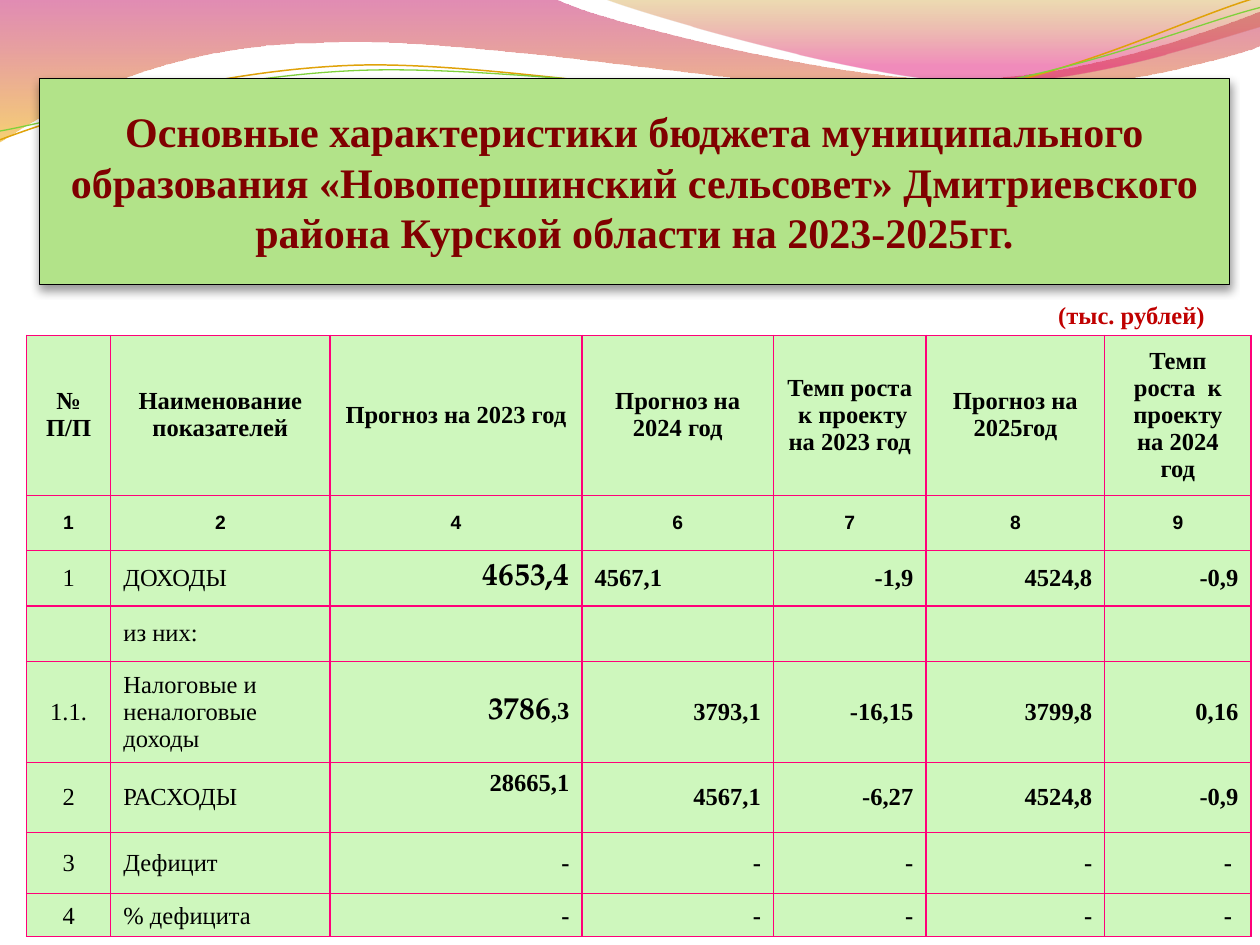
from lxml.etree import SubElement
from pptx import Presentation
from pptx.dml.color import RGBColor
from pptx.enum.text import MSO_ANCHOR, PP_ALIGN
from pptx.oxml.ns import qn
from pptx.util import Inches, Pt

PINK, AMBER = RGBColor(0xBD, 0x00, 0x59), RGBColor(0xF0, 0xAB, 0x00)
OLIVE, MAGENTA = RGBColor(0xC3, 0x8B, 0x00), RGBColor(0xE1, 0x00, 0x6B)
ORANGE, LIME = RGBColor(0xE0, 0xA2, 0x09), RGBColor(0x7F, 0xD1, 0x3B)
TITLE_FILL, MAROON = RGBColor(0xB2, 0xE3, 0x89), RGBColor(0x80, 0x00, 0x00)
RED, BLACK = RGBColor(0xC0, 0x00, 0x00), RGBColor(0x00, 0x00, 0x00)
CELL_FILL, BORDER = RGBColor(0xCE, 0xF7, 0xBD), RGBColor(0xFF, 0x00, 0x79)
SERIF, SANS, PAGELLA = "Times New Roman", "Arial", "TeX Gyre Pagella"

# Outlines: a pair is a point for a straight line, six numbers are a Bezier curve.
LEFT_WAVE = [(0, -0.01), (4.4, -0.01), (4.76, 0.17, 6.64, 0.63, 7.58, 0.63),
             (8.53, 0.63, 9.58, 0.26, 10, 0.09), (10.01, 0.36),
             (9.83, 0.44, 8.7, 0.76, 7.46, 0.75),
             (6.22, 0.75, 3.82, 0.28, 2.57, 0.34),
             (1.29, 0.35, 0.46, 0.83, -0.01, 1.13)]
RIGHT_WAVE = [(4.79, -0.01), (5.09, 0.11, 6.82, 0.62, 7.69, 0.65),
              (8.56, 0.69, 9.61, 0.32, 10, 0.21), (10, 0)]
ORANGE_LINE = [(0, 1.11), (0.48, 0.93, 1.58, 0.57, 2.77, 0.52),
               (3.95, 0.47, 5.93, 0.89, 7.13, 0.8),
               (8.33, 0.71, 9.38, 0.15, 9.98, -0.02)]
LIME_LINE = [(0, 1.04), (0.47, 0.96, 1.64, 0.61, 2.83, 0.56),
             (4.03, 0.51, 5.97, 0.83, 7.17, 0.75),
             (8.36, 0.67, 9.41, 0.21, 10, 0.06)]

COLS = [0.67, 1.74, 2, 1.52, 1.21, 1.42, 1.16]
ROWS = [1.27, 0.44, 0.44, 0.44, 0.8, 0.56, 0.48, 0.34]
CELLS = [
    ["№ П/П", "Наименование показателей", "Прогноз на 2023 год", "Прогноз на 2024 год",
     "Темп роста  к проекту на 2023 год", "Прогноз на 2025год",
     "Темп роста  к проекту на 2024 год"],
    ["1", "2", "4", "6", "7", "8", "9"],
    ["1", "ДОХОДЫ", "4653,4", "4567,1", "-1,9", "4524,8", "-0,9"],
    ["", "из них:", "", "", "", "", ""],
    ["1.1.", "Налоговые и неналоговые доходы", "3786,3", "3793,1", "-16,15", "3799,8", "0,16"],
    ["2", "РАСХОДЫ", "28665,1", "4567,1", "-6,27", "4524,8", "-0,9"],
    ["3", "Дефицит", "-", "-", "-", "-", "-"],
    ["4", "% дефицита", "-", "-", "-", "-", "-"],
]
LARGE_RUNS = {(2, 2): ["4653,4"], (4, 2): ["3786", ",3"]}  # first run is larger


def set_format(target, values):
    for name, value in values.items():
        setattr(target, name, value)


def add_run(p, text, size, color, bold=True, name=SERIF):
    r = p.add_run()
    r.text = text
    set_format(r.font, {"size": Pt(size), "bold": bold, "name": name})
    r.font.color.rgb = color


def add_outline(s, outline, close):
    """Join the end points by lines, then bend the curved segments."""
    ends = [(Inches(segment[-2]), Inches(segment[-1])) for segment in outline]
    builder = s.shapes.build_freeform(*ends[0])
    builder.add_line_segments(ends[1:], close=close)
    sp = builder.convert_to_shape()
    sp.shadow.inherit = False
    lines = list(sp._element.spPr.iter(qn("a:lnTo")))
    for line, segment in zip(lines, outline[1:]):
        if len(segment) == 6:
            line.tag = qn("a:cubicBezTo")
            end = line[0]
            for x, y in (segment[:2], segment[2:4]):
                SubElement(line, qn("a:pt"), x=str(Inches(x) - sp.left),
                           y=str(Inches(y) - sp.top))
            line.append(end)
    return sp


def add_wave(s, outline, stops):
    """Draw a filled wave; each stop is (position, colour, opacity in percent)."""
    sp = add_outline(s, outline, True)
    sp.line.fill.background()
    sp.fill.gradient()
    sp.fill.gradient_angle = 270
    for stop, (position, color, opacity) in zip(sp.fill.gradient_stops, stops):
        stop.position = position
        stop.color.rgb = color
    for clr, stop in zip(sp._element.spPr.iter(qn("a:srgbClr")), stops):
        SubElement(clr, qn("a:alpha"), val=str(stop[2] * 1000))


def add_wave_line(s, outline, color, width):
    sp = add_outline(s, outline, False)
    sp.fill.background()
    sp.line.color.rgb = color
    sp.line.width = Pt(width)


def add_waves(s):
    add_wave(s, LEFT_WAVE, [(0, PINK, 45), (1, AMBER, 55)])
    add_wave(s, RIGHT_WAVE, [(0, OLIVE, 30), (0.8, MAGENTA, 45)])
    add_wave_line(s, ORANGE_LINE, ORANGE, 0.85)
    add_wave_line(s, LIME_LINE, LIME, 0.75)


def place_title(s, left, top, width, height):
    title = s.shapes.title
    s.shapes._spTree.append(title._element)  # in front of the waves
    set_format(title, {"left": left, "top": top, "width": width, "height": height})
    title.fill.solid()
    title.fill.fore_color.rgb = TITLE_FILL
    title.line.color.rgb = BLACK
    title.line.width = Pt(0.5)
    effects = SubElement(title._element.spPr, qn("a:effectLst"))
    shadow = SubElement(effects, qn("a:outerShdw"), blurRad=str(Pt(5.2)), dist=str(Pt(3)),
                        dir="5400000", rotWithShape="0")
    color = SubElement(shadow, qn("a:srgbClr"), val=str(BLACK))
    SubElement(color, qn("a:alpha"), val="40000")
    tf = title.text_frame
    set_format(tf, {"word_wrap": True, "vertical_anchor": MSO_ANCHOR.MIDDLE})
    p = tf.paragraphs[0]
    p.alignment = PP_ALIGN.CENTER
    add_run(p, "Основные характеристики бюджета муниципального образования "
               "«Новопершинский сельсовет» Дмитриевского района Курской области "
               "на 2023-2025гг.", 24, MAROON)


def add_units(s, left, top, width, height):
    tf = s.shapes.add_textbox(left, top, width, height).text_frame
    set_format(tf, {"word_wrap": True, "vertical_anchor": MSO_ANCHOR.MIDDLE})
    add_run(tf.paragraphs[0], "(тыс. рублей)", 14, RED)


def add_borders(cell):
    tcPr = cell._tc.get_or_add_tcPr()
    for side in ("lnL", "lnR", "lnT", "lnB"):
        ln = SubElement(tcPr, qn(f"a:{side}"), w=str(Pt(0.75)))
        SubElement(SubElement(ln, qn("a:solidFill")), qn("a:srgbClr"), val=str(BORDER))


def fill_cell(cell, row, col, text):
    add_borders(cell)
    cell.fill.solid()
    cell.fill.fore_color.rgb = CELL_FILL
    cell.vertical_anchor = MSO_ANCHOR.BOTTOM if row == len(ROWS) - 1 else MSO_ANCHOR.MIDDLE
    if (row, col) == (5, 2):
        set_format(cell, {"vertical_anchor": MSO_ANCHOR.TOP, "margin_top": Inches(0.06)})
    if text == "-" and col == len(COLS) - 1:
        cell.margin_right = Inches(0.15)
    p = cell.text_frame.paragraphs[0]
    if row < 2 or col == 0:
        p.alignment = PP_ALIGN.CENTER
    elif col == 1 or (row, col) == (2, 3):
        p.alignment = PP_ALIGN.LEFT
    else:
        p.alignment = PP_ALIGN.RIGHT
    if (row, col) in LARGE_RUNS:
        large, *rest = LARGE_RUNS[row, col]
        add_run(p, large, 18, BLACK, name=PAGELLA)
        for part in rest:
            add_run(p, part, 14, BLACK)
    elif row == 1:
        add_run(p, text, 11, BLACK, name=SANS)
    elif text:
        add_run(p, text, 14, BLACK, bold=row == 0 or col > 1)


def add_budget_table(s, left, top, width, height):
    table = s.shapes.add_table(len(ROWS), len(COLS), left, top, width, height).table
    set_format(table, {"first_row": False, "horz_banding": False})
    for column, size in zip(table.columns, COLS):
        column.width = Inches(size)
    for row, size in zip(table.rows, ROWS):
        row.height = Inches(size)
    for i, texts in enumerate(CELLS):
        for j, text in enumerate(texts):
            fill_cell(table.cell(i, j), i, j, text)


def main():
    prs = Presentation()
    prs.slide_width, prs.slide_height = Inches(10), Inches(7.5)
    s = prs.slides.add_slide(prs.slide_layouts[5])
    add_waves(s)
    place_title(s, Inches(0.31), Inches(0.62), Inches(9.45), Inches(1.64))
    add_units(s, Inches(8.3), Inches(2.33), Inches(1.42), Inches(0.33))
    add_budget_table(s, Inches(0.21), Inches(2.66), Inches(9.72), Inches(4.77))
    prs.save("out.pptx")


if __name__ == "__main__":
    main()
